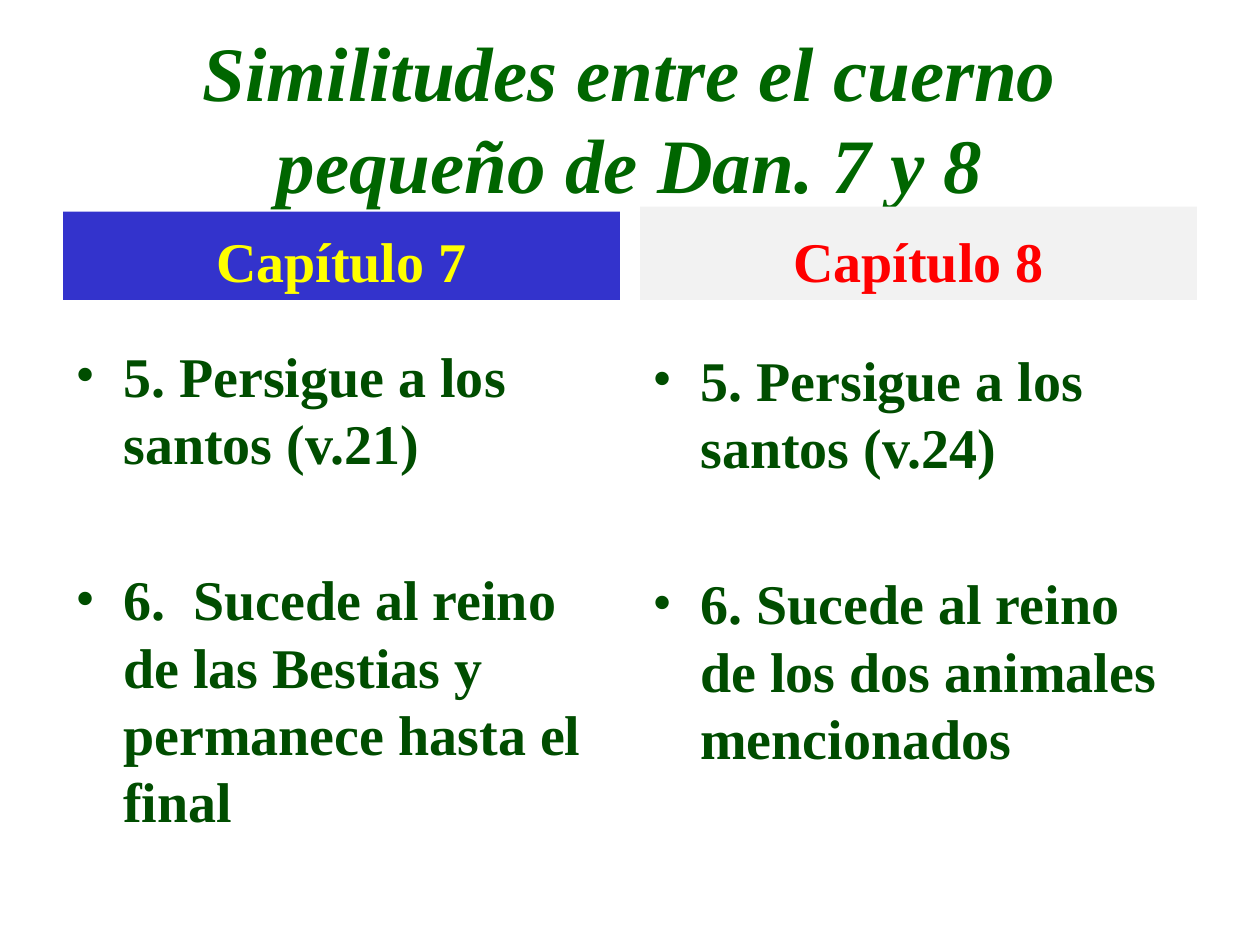
from dataclasses import dataclass

import pptx
import pptx.dml.color
import pptx.enum.shapes
import pptx.enum.text
import pptx.oxml
import pptx.oxml.ns
import pptx.util
from pptx.util import Inches

Align = pptx.enum.text.PP_ALIGN
Anchor = pptx.enum.text.MSO_ANCHOR


@dataclass(frozen=True)
class Theme:
    """Colours and type sizes of the slide."""
    font: str = "Times New Roman"
    title: str = "006600"
    body: str = "004D00"
    title_size: int = 44
    text_size: int = 32
    item_gap: int = 51


THEME = Theme()


def rgb(value):
    """Turn a hex string into a colour."""
    return pptx.dml.color.RGBColor.from_string(value)


def add_bullet(paragraph, indent):
    """Give a paragraph a hanging round bullet."""
    properties = paragraph._p.get_or_add_pPr()
    properties.set("marL", str(indent))
    properties.set("indent", str(-indent))
    namespace = pptx.oxml.ns.nsdecls("a")
    for element in (f'<a:buFont {namespace} typeface="{THEME.font}"/>',
                    f'<a:buChar {namespace} char="•"/>'):
        properties.append(pptx.oxml.parse_xml(element))


def write_text(shape, lines, color, size=THEME.text_size, align=Align.LEFT,
               anchor=Anchor.TOP, italic=False, bullets=False, gap=0):
    """Write formatted paragraphs into a shape."""
    frame = shape.text_frame
    frame.word_wrap = True
    frame.vertical_anchor = anchor
    for index, line in enumerate(lines):
        paragraph = frame.add_paragraph() if index else frame.paragraphs[0]
        paragraph.text = line
        paragraph.alignment = align
        if index:
            paragraph.space_before = pptx.util.Pt(gap)
        if bullets:
            add_bullet(paragraph, Inches(0.38))
        font = paragraph.font
        font.name, font.size = THEME.font, pptx.util.Pt(size)
        font.bold, font.italic = True, italic
        font.color.rgb = rgb(color)


def add_title(slide, left, top, width, height, text):
    """Place the centred slide title in its box."""
    shape = slide.shapes.add_textbox(left, top, width, height)
    write_text(shape, [text], THEME.title, size=THEME.title_size,
               align=Align.CENTER, anchor=Anchor.MIDDLE, italic=True)


def add_header(slide, left, top, width, height, text, fill, color):
    """Place a filled chapter heading in its box."""
    shape = slide.shapes.add_shape(
        pptx.enum.shapes.MSO_SHAPE.RECTANGLE, left, top, width, height)
    shape.shadow.inherit = False
    shape.fill.solid()
    shape.fill.fore_color.rgb = rgb(fill)
    shape.line.fill.background()
    write_text(shape, [text], color, align=Align.CENTER, anchor=Anchor.BOTTOM)


def add_points(slide, left, top, width, height, points):
    """Place the bulleted points of a chapter in their box."""
    shape = slide.shapes.add_textbox(left, top, width, height)
    write_text(shape, points, THEME.body, bullets=True, gap=THEME.item_gap)


def main():
    """Build and save the presentation."""
    presentation = pptx.Presentation()
    presentation.slide_width, presentation.slide_height = Inches(10), Inches(7.5)
    slide = presentation.slides.add_slide(presentation.slide_layouts[6])
    margin, column_width, header_bottom = Inches(0.5), Inches(4.42), Inches(2.38)
    right = presentation.slide_width - margin - column_width

    add_title(slide, margin, Inches(0.3), Inches(9), Inches(1.25),
              "Similitudes entre el cuerno pequeño de Dan. 7 y 8")
    chapters = [
        (margin, "Capítulo 7", "3333CC", "FFFF00", 0.7, 2.66, 4.04,
         ["5. Persigue a los santos (v.21)",
          "6.  Sucede al reino de las Bestias y permanece hasta el final"]),
        (right, "Capítulo 8", "F2F2F2", "FF0000", 0.74, 2.69, 4.81,
         ["5. Persigue a los santos (v.24)",
          "6. Sucede al reino de los dos animales mencionados"]),
    ]
    for left, name, fill, color, header_height, top, height, points in chapters:
        add_header(slide, left, header_bottom - Inches(header_height),
                   column_width, Inches(header_height), name, fill, color)
        add_points(slide, left, Inches(top), column_width, Inches(height), points)
    presentation.save("out.pptx")


if __name__ == "__main__":
    main()
